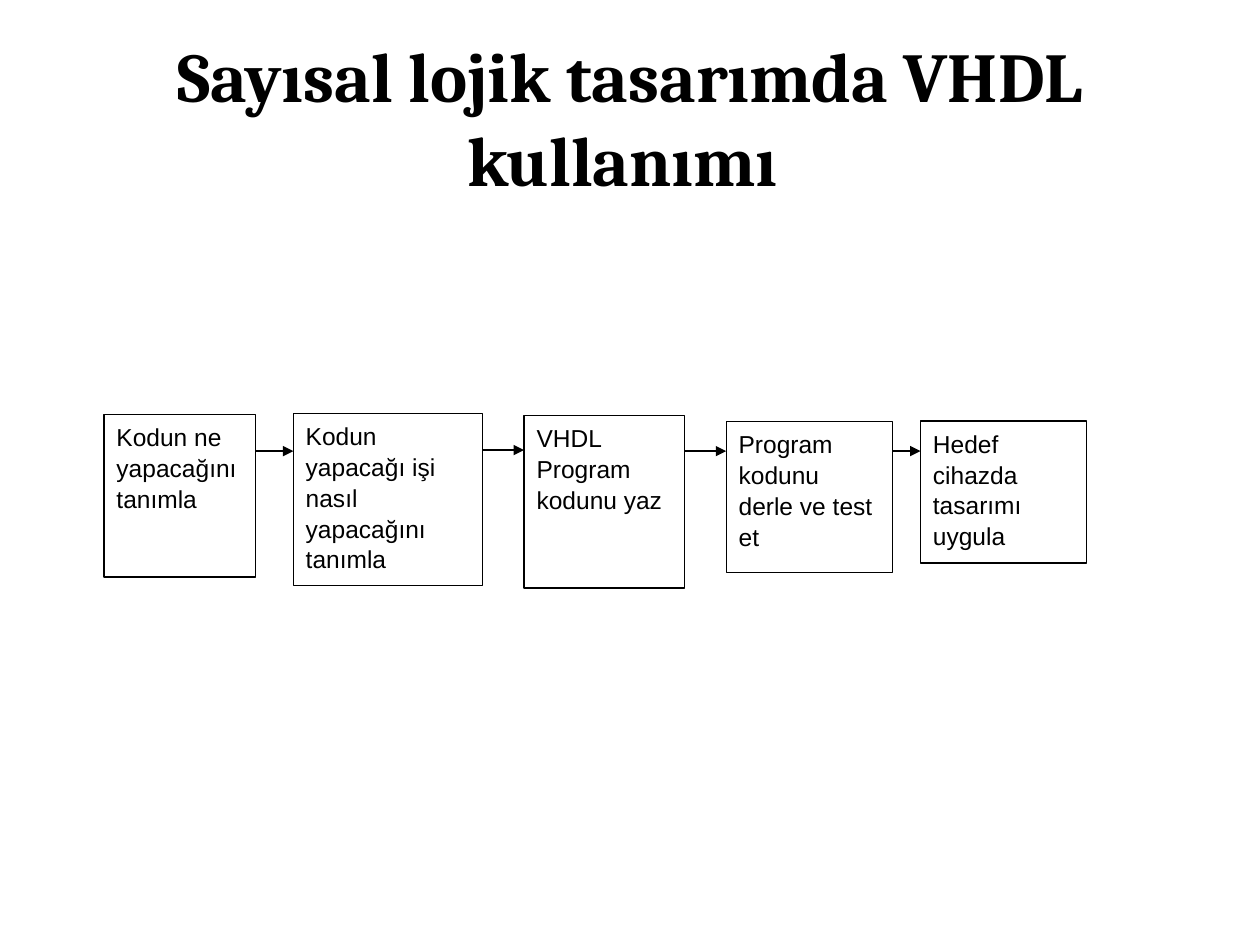
"""Build a slide showing the VHDL design flow as five boxes joined by arrows."""
from dataclasses import dataclass

from lxml.etree import SubElement
from pptx import Presentation
from pptx.dml.color import RGBColor
from pptx.enum.shapes import MSO_CONNECTOR, MSO_SHAPE
from pptx.enum.text import MSO_ANCHOR, PP_ALIGN
from pptx.oxml.ns import qn
from pptx.util import Pt

BLACK = RGBColor(0, 0, 0)
WHITE = RGBColor(255, 255, 255)
LINE_WIDTH = Pt(0.75)


@dataclass(frozen=True)
class Step:
    text: str
    left: float
    top: float
    width: float
    height: float

    @property
    def right(self) -> float:
        return self.left + self.width


STEPS = [
    Step("Kodun ne yapacağını tanımla", 59.5, 236.9, 86.5, 92.8),
    Step("Kodun yapacağı işi nasıl yapacağını tanımla", 167.6, 236.2, 108.2, 98.6),
    Step("VHDL Program kodunu yaz", 299.5, 237.6, 91.8, 98.4),
    Step("Program kodunu derle ve test et", 415, 240.8, 95, 86.4),
    Step("Hedef cihazda tasarımı uygula", 526, 240.6, 95, 81.2),
]
ARROW_HEIGHTS = [257.8, 257.2, 257.8, 257.8]


def write_text(box, text: str, *, font: str, size: float, bold: bool = False,
               align=PP_ALIGN.LEFT, anchor=MSO_ANCHOR.TOP, spacing: float = 1.0) -> None:
    frame = box.text_frame
    frame.word_wrap = True
    frame.vertical_anchor = anchor
    para = frame.paragraphs[0]
    para.alignment = align
    para.line_spacing = spacing
    span = para.add_run()
    span.text = text
    span.font.name = font
    span.font.size = Pt(size)
    span.font.bold = bold
    span.font.color.rgb = BLACK


def draw_step(page, step: Step) -> None:
    box = page.shapes.add_shape(MSO_SHAPE.RECTANGLE, Pt(step.left), Pt(step.top),
                                Pt(step.width), Pt(step.height))
    box.shadow.inherit = False
    box.fill.solid()
    box.fill.fore_color.rgb = WHITE
    box.line.color.rgb = BLACK
    box.line.width = LINE_WIDTH
    write_text(box, step.text, font="Arial", size=14, spacing=1.05)


def draw_arrow(page, start: Step, end: Step, height: float) -> None:
    arrow = page.shapes.add_connector(MSO_CONNECTOR.STRAIGHT, Pt(start.right), Pt(height),
                                      Pt(end.left), Pt(height))
    arrow.line.color.rgb = BLACK
    arrow.line.width = LINE_WIDTH
    SubElement(arrow.line._get_or_add_ln(), qn("a:tailEnd"), type="triangle")
    SubElement(arrow._element.spPr, qn("a:effectLst"))


def main() -> None:
    deck = Presentation()
    deck.slide_width, deck.slide_height = Pt(720), Pt(540)
    page = deck.slides.add_slide(deck.slide_layouts[6])
    title = page.shapes.add_textbox(Pt(36), Pt(21.6), Pt(648), Pt(90))
    write_text(title, "Sayısal lojik tasarımda VHDL kullanımı ", font="Cambria", size=40,
               bold=True, align=PP_ALIGN.CENTER, anchor=MSO_ANCHOR.MIDDLE)
    for step in STEPS:
        draw_step(page, step)
    for start, end, height in zip(STEPS, STEPS[1:], ARROW_HEIGHTS):
        draw_arrow(page, start, end, height)
    deck.save("out.pptx")


if __name__ == "__main__":
    main()
